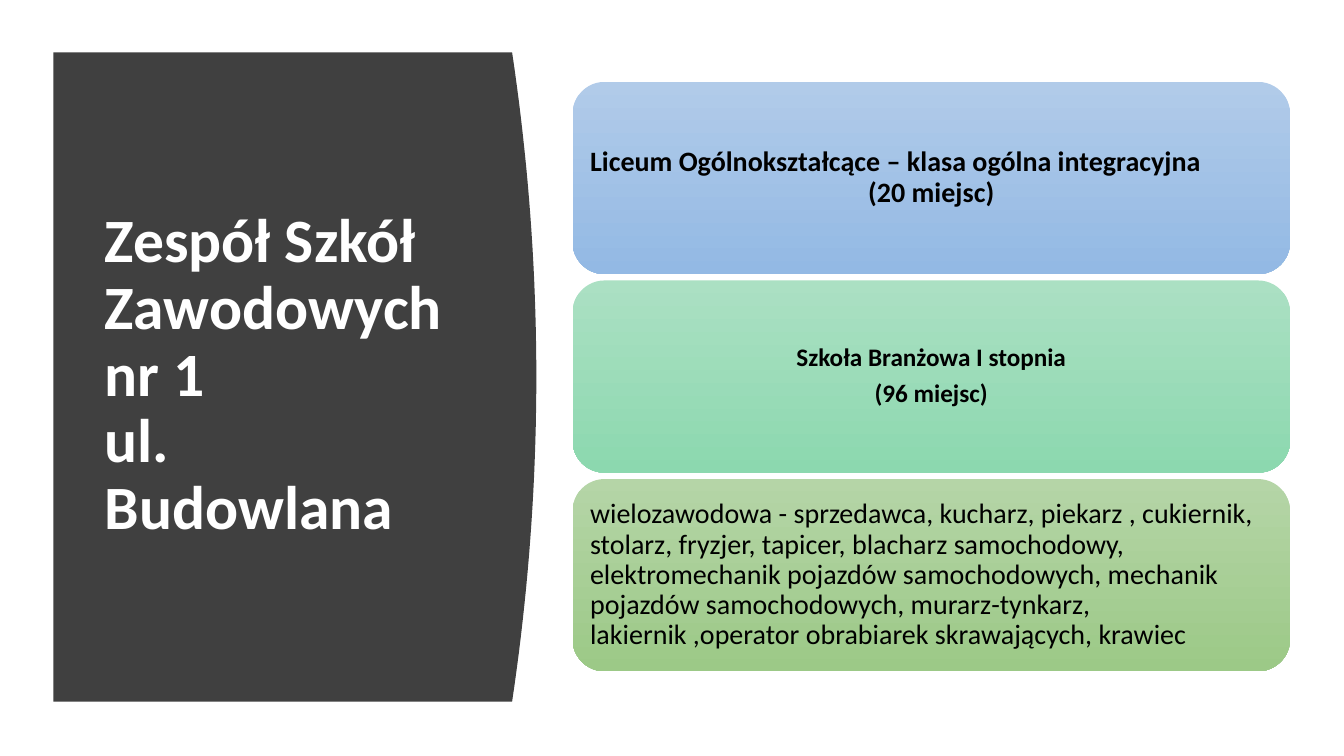
from dataclasses import dataclass

from pptx import Presentation
from pptx.dml.color import RGBColor
from pptx.enum.shapes import MSO_SHAPE
from pptx.enum.text import MSO_ANCHOR, PP_ALIGN
from pptx.shapes.base import BaseShape
from pptx.slide import Slide
from pptx.text.text import TextFrame
from pptx.util import Pt

WHITE = RGBColor(0xFF, 0xFF, 0xFF)
BLACK = RGBColor(0x00, 0x00, 0x00)
CHARCOAL = RGBColor(0x40, 0x40, 0x40)
BLUE_TOP = RGBColor(0xB1, 0xCB, 0xE9)
BLUE_BOTTOM = RGBColor(0x93, 0xB9, 0xE4)
MINT_TOP = RGBColor(0xAB, 0xE0, 0xC3)
MINT_BOTTOM = RGBColor(0x8C, 0xD8, 0xAF)
GREEN_TOP = RGBColor(0xB5, 0xD5, 0xA7)
GREEN_BOTTOM = RGBColor(0x9C, 0xC9, 0x87)

FONT = "Calibri"
CARD_LEFT, CARD_TOP = 409, 58.5
CARD_WIDTH, CARD_HEIGHT, CARD_PITCH = 512.5, 137.3, 141.85
PANEL_LEFT, PANEL_TOP, PANEL_HEIGHT = 38.2, 37.4, 463.8
PANEL_EDGE, PANEL_BULGE, CURVE_STEPS = 365.8, 17.3, 40


@dataclass
class Line:
    text: str
    align: PP_ALIGN = PP_ALIGN.CENTER
    space_after: float = 0


@dataclass
class Card:
    top_color: RGBColor
    bottom_color: RGBColor
    size: float
    bold: bool
    margin: float
    lines: list[Line]


TITLE = [Line("Zespół Szkół Zawodowych nr 1\nul. Budowlana", PP_ALIGN.LEFT)]
CARDS = [
    Card(BLUE_TOP, BLUE_BOTTOM, 20, True, 5.8, [
        Line("Liceum Ogólnokształcące – klasa ogólna integracyjna", PP_ALIGN.LEFT),
        Line("(20 miejsc)", space_after=7),
    ]),
    Card(MINT_TOP, MINT_BOTTOM, 18, True, 5, [
        Line("Szkoła Branżowa I stopnia", space_after=6.3),
        Line("(96 miejsc)", space_after=6.3),
    ]),
    Card(GREEN_TOP, GREEN_BOTTOM, 20, False, 5.8, [
        Line(
            "wielozawodowa - sprzedawca, kucharz, piekarz , cukiernik, stolarz, "
            "fryzjer, tapicer, blacharz samochodowy, elektromechanik pojazdów "
            "samochodowych, mechanik pojazdów samochodowych, murarz-tynkarz,\n"
            "lakiernik ,operator obrabiarek skrawających, krawiec",
            PP_ALIGN.LEFT, 7,
        ),
    ]),
]


def write_lines(frame: TextFrame, lines: list[Line], *, size: float,
                color: RGBColor, bold: bool, margin: float) -> None:
    frame.word_wrap = True
    frame.vertical_anchor = MSO_ANCHOR.MIDDLE
    frame.margin_left = frame.margin_right = Pt(margin)
    frame.margin_top = frame.margin_bottom = Pt(margin)
    for index, line in enumerate(lines):
        para = frame.add_paragraph() if index else frame.paragraphs[0]
        para.alignment = line.align
        para.line_spacing = 0.9
        para.space_after = Pt(line.space_after)
        for part_index, part in enumerate(line.text.split("\n")):
            if part_index:
                para.add_line_break()
            span = para.add_run()
            span.text = part
            span.font.name = FONT
            span.font.size = Pt(size)
            span.font.bold = bold
            span.font.color.rgb = color


def remove_outline(shape: BaseShape) -> None:
    shape.line.fill.background()
    shape.shadow.inherit = False


def draw_panel(page: Slide) -> None:
    curve = []
    for step in range(CURVE_STEPS + 1):
        share = step / CURVE_STEPS
        bulge = PANEL_BULGE * (1 - (2 * share - 1) ** 2)
        curve.append((Pt(PANEL_EDGE + bulge), Pt(PANEL_TOP + share * PANEL_HEIGHT)))
    builder = page.shapes.build_freeform(Pt(PANEL_LEFT), Pt(PANEL_TOP))
    builder.add_line_segments(curve + [(Pt(PANEL_LEFT), Pt(PANEL_TOP + PANEL_HEIGHT))])
    panel = builder.convert_to_shape()
    panel.fill.solid()
    panel.fill.fore_color.rgb = CHARCOAL
    remove_outline(panel)


def draw_title(page: Slide) -> None:
    box = page.shapes.add_textbox(Pt(67.7), Pt(80), Pt(269.3), Pt(377.3))
    write_lines(box.text_frame, TITLE, size=44, color=WHITE, bold=True, margin=7.2)


def draw_card(page: Slide, card: Card, top: float) -> None:
    box = page.shapes.add_shape(MSO_SHAPE.ROUNDED_RECTANGLE, Pt(CARD_LEFT), Pt(top),
                                Pt(CARD_WIDTH), Pt(CARD_HEIGHT))
    box.fill.gradient()
    box.fill.gradient_angle = 270
    for stop, color in zip(box.fill.gradient_stops, (card.top_color, card.bottom_color)):
        stop.color.rgb = color
    remove_outline(box)
    write_lines(box.text_frame, card.lines, size=card.size, color=BLACK,
                bold=card.bold, margin=card.margin)


def main() -> None:
    deck = Presentation()
    deck.slide_width, deck.slide_height = Pt(960), Pt(540)
    page = deck.slides.add_slide(deck.slide_layouts[6])
    draw_panel(page)
    draw_title(page)
    for index, card in enumerate(CARDS):
        draw_card(page, card, CARD_TOP + index * CARD_PITCH)
    deck.save("out.pptx")


if __name__ == "__main__":
    main()
